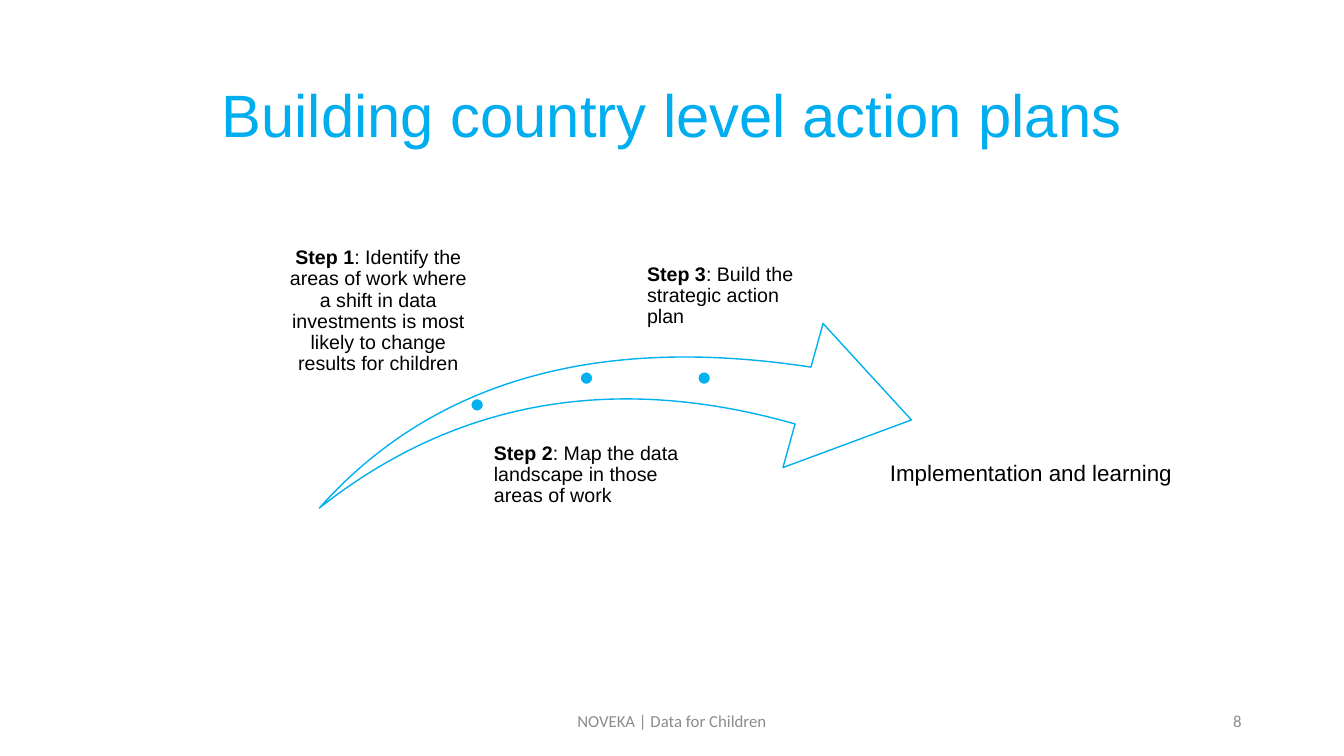
from pptx import Presentation
from pptx.dml.color import RGBColor
from pptx.enum.shapes import MSO_SHAPE
from pptx.enum.text import MSO_ANCHOR, MSO_AUTO_SIZE, PP_ALIGN
from pptx.util import Pt

SWOOSH, OVAL = MSO_SHAPE.SWOOSH_ARROW, MSO_SHAPE.OVAL
TOP, MIDDLE, BOTTOM = MSO_ANCHOR.TOP, MSO_ANCHOR.MIDDLE, MSO_ANCHOR.BOTTOM
LEFT, CENTER, RIGHT = PP_ALIGN.LEFT, PP_ALIGN.CENTER, PP_ALIGN.RIGHT
FIXED = MSO_AUTO_SIZE.NONE
COLORS = {"title": "00AEEF", "swoosh": "00B0F0", "white": "FFFFFF",
          "text": "000000", "footer": "8C8C8C"}


def color(name):
    return RGBColor.from_string(COLORS[name])


def write(frame, *parts, size=14, font="Arial", ink="text", align=LEFT,
          anchor=MIDDLE, inset=None, lead=1.0, bold=False):
    """Fill a frame with one paragraph; with bold, its first part is bold."""
    frame.word_wrap = True
    frame.auto_size = FIXED
    frame.vertical_anchor = anchor
    if inset is not None:
        frame.margin_left = frame.margin_right = Pt(inset)
        frame.margin_top = frame.margin_bottom = Pt(inset)
    para = frame.paragraphs[0]
    para.alignment = align
    para.line_spacing = lead
    for i, part in enumerate(parts):
        run = para.add_run()
        run.text = part
        run.font.name = font
        run.font.size = Pt(size)
        run.font.bold = bold and i == 0
        run.font.color.rgb = color(ink)


class Board:
    def __init__(self, deck, font="Arial"):
        self.slide = deck.slides.add_slide(deck.slide_layouts[5])
        self.font = font

    def title(self, text, x, y, w, h, **look):
        box = self.slide.shapes.title
        box.left, box.top, box.width, box.height = map(Pt, (x, y, w, h))
        write(box.text_frame, text, **{"font": self.font, **look})

    def text(self, parts, x, y, w, h, **look):
        box = self.slide.shapes.add_textbox(*map(Pt, (x, y, w, h)))
        write(box.text_frame, *parts, **{"font": self.font, **look})

    def shape(self, kind, x, y, w, h, fill, line):
        item = self.slide.shapes.add_shape(kind, *map(Pt, (x, y, w, h)))
        item.shadow.inherit = False
        item.fill.solid()
        item.fill.fore_color.rgb = color(fill)
        item.line.color.rgb = color(line)
        item.line.width = Pt(1)
        return item


def main():
    deck = Presentation()
    deck.slide_width, deck.slide_height = Pt(960), Pt(540)
    board = Board(deck)

    board.title("Building country level action plans", 66, 28.8, 828, 104.4,
                size=42.7, ink="title", align=CENTER)

    for text, x, w, align in (("NOVEKA | Data for Children", 318, 324, CENTER),
                              ("8", 678, 216, RIGHT)):
        board.text([text], x, 500.4, w, 28.8, size=12, font="Calibri",
                   ink="footer", align=align)

    swoosh = board.shape(SWOOSH, 262.8, 184.3, 368.6, 257, "white", "swoosh")
    swoosh.rotation = 22
    swoosh.adjustments[0] = 0.163
    swoosh.adjustments[1] = 0.314

    for x, y in ((336.2, 284.6), (414.3, 265.5), (498.4, 265.5)):
        board.shape(OVAL, x, y, 9.2, 9.2, "swoosh", "white")

    steps = (
        ("Identify the areas of work where a shift in data investments is "
         "most likely to change results for children",
         (203, 174.2, 134.6, 95), CENTER, BOTTOM),
        ("Map the data landscape in those areas of work",
         (351.4, 303.8, 139, 71.3), LEFT, MIDDLE),
        ("Build the strategic action plan",
         (460.8, 171.4, 118, 80.6), LEFT, MIDDLE),
    )
    for num, (text, area, align, anchor) in enumerate(steps, 1):
        board.text([f"Step {num}", f": {text}"], *area, align=align,
                   anchor=anchor, inset=1.4, lead=0.9, bold=True)

    board.text(["Implementation and learning"], 628.6, 324.7, 224.6, 26.6,
               size=16, anchor=TOP)

    deck.save("out.pptx")


if __name__ == "__main__":
    main()
